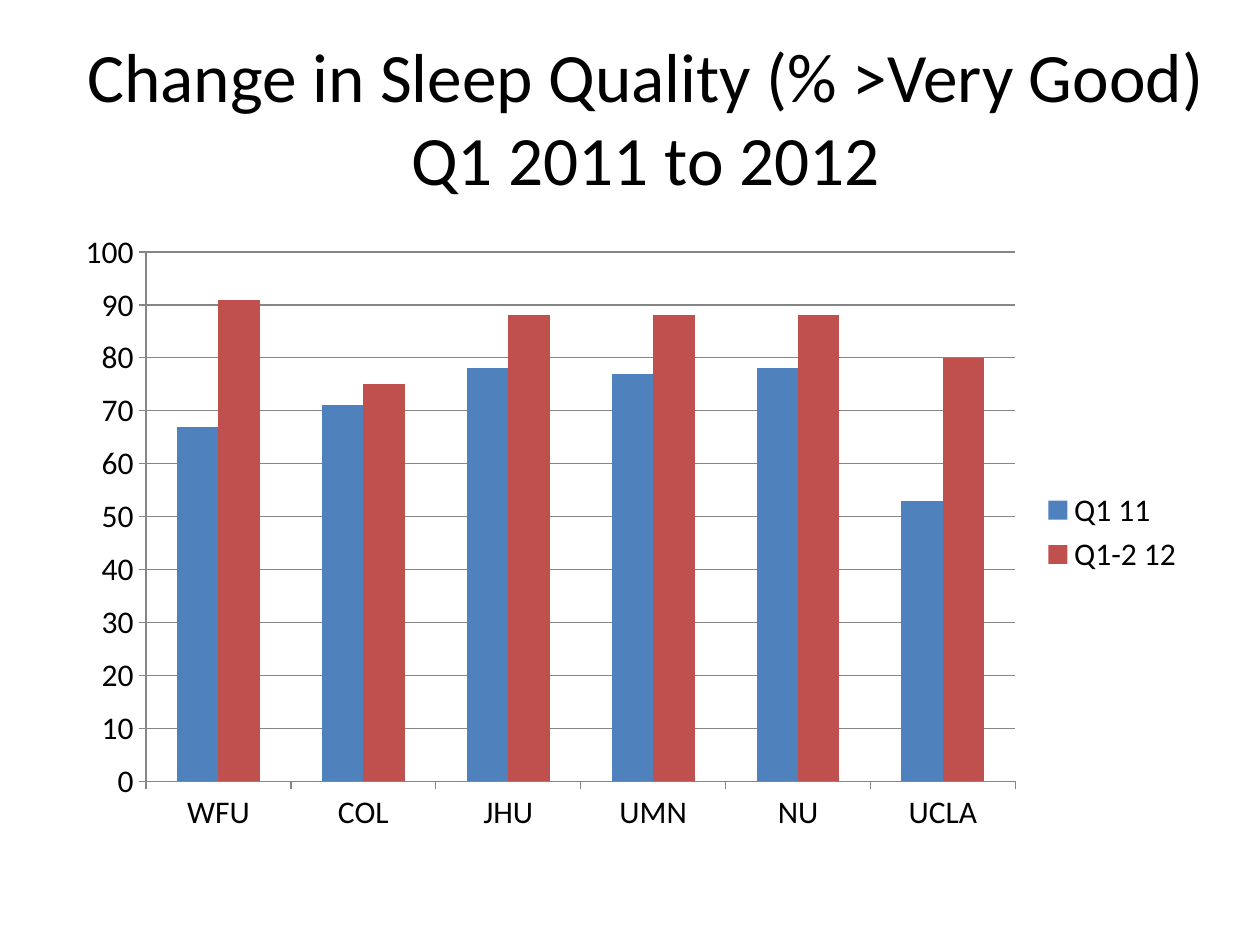
from pptx import Presentation
from pptx import util as u
from pptx.chart import data as chart_data
from pptx.dml import color
from pptx.enum import chart as ch, text

PX = 9144
FONT = "Calibri"
COLORS = {"ink": "000000", "grid": "868686", "before": "4F81BD", "after": "C0504D"}

TITLE_LINES = ["Change in Sleep Quality (% >Very Good)", "Q1 2011 to 2012"]
SITES = ["WFU", "COL", "JHU", "UMN", "NU", "UCLA"]
SERIES = [
    ("Q1 11", [67, 71, 78, 77, 78, 53], "before"),
    ("Q1-2 12", [91, 75, 88, 88, 88, 80], "after"),
]


def rgb(name):
    return color.RGBColor.from_string(COLORS[name])


def emu(box):
    return [u.Emu(length * PX) for length in box]


def style_font(font, size):
    font.name = FONT
    font.size = u.Pt(size)
    font.color.rgb = rgb("ink")


def style_line(line):
    line.color.rgb = rgb("grid")
    line.width = u.Pt(0.75)


def add_title(page, box):
    title = page.shapes.title
    title.left, title.top, title.width, title.height = emu(box)
    frame = title.text_frame
    frame.word_wrap = True
    frame.auto_size = text.MSO_AUTO_SIZE.NONE
    frame.vertical_anchor = text.MSO_ANCHOR.MIDDLE
    para = frame.paragraphs[0]
    para.alignment = text.PP_ALIGN.CENTER
    for index, line in enumerate(TITLE_LINES):
        if index:
            para.add_line_break()
        span = para.add_run()
        span.text = line
        style_font(span.font, 39.6)


def add_sleep_chart(page, box):
    data = chart_data.CategoryChartData()
    data.categories = SITES
    for name, values, _ in SERIES:
        data.add_series(name, values)
    chart = page.shapes.add_chart(
        ch.XL_CHART_TYPE.COLUMN_CLUSTERED, *emu(box), data
    ).chart
    style_font(chart.font, 18)
    chart.has_title = False
    chart.has_legend = True
    chart.legend.position = ch.XL_LEGEND_POSITION.RIGHT
    chart.legend.include_in_layout = False

    plot = chart.plots[0]
    plot.gap_width = 150
    plot.overlap = 0
    plot.vary_by_categories = False
    for series, (_, _, fill) in zip(plot.series, SERIES):
        series.format.fill.solid()
        series.format.fill.fore_color.rgb = rgb(fill)

    for axis in (chart.category_axis, chart.value_axis):
        axis.major_tick_mark = ch.XL_TICK_MARK.OUTSIDE
        axis.minor_tick_mark = ch.XL_TICK_MARK.NONE
        style_line(axis.format.line)
    values = chart.value_axis
    values.minimum_scale, values.maximum_scale, values.major_unit = 0, 100, 10
    values.has_major_gridlines = True
    style_line(values.major_gridlines.format.line)


def main():
    deck = Presentation()
    deck.slide_width, deck.slide_height = emu((1000, 750))
    page = deck.slides.add_slide(deck.slide_layouts[5])
    add_title(page, (50, 30, 925, 125))
    add_sleep_chart(page, (50, 175, 900, 495))
    deck.save("out.pptx")


if __name__ == "__main__":
    main()
